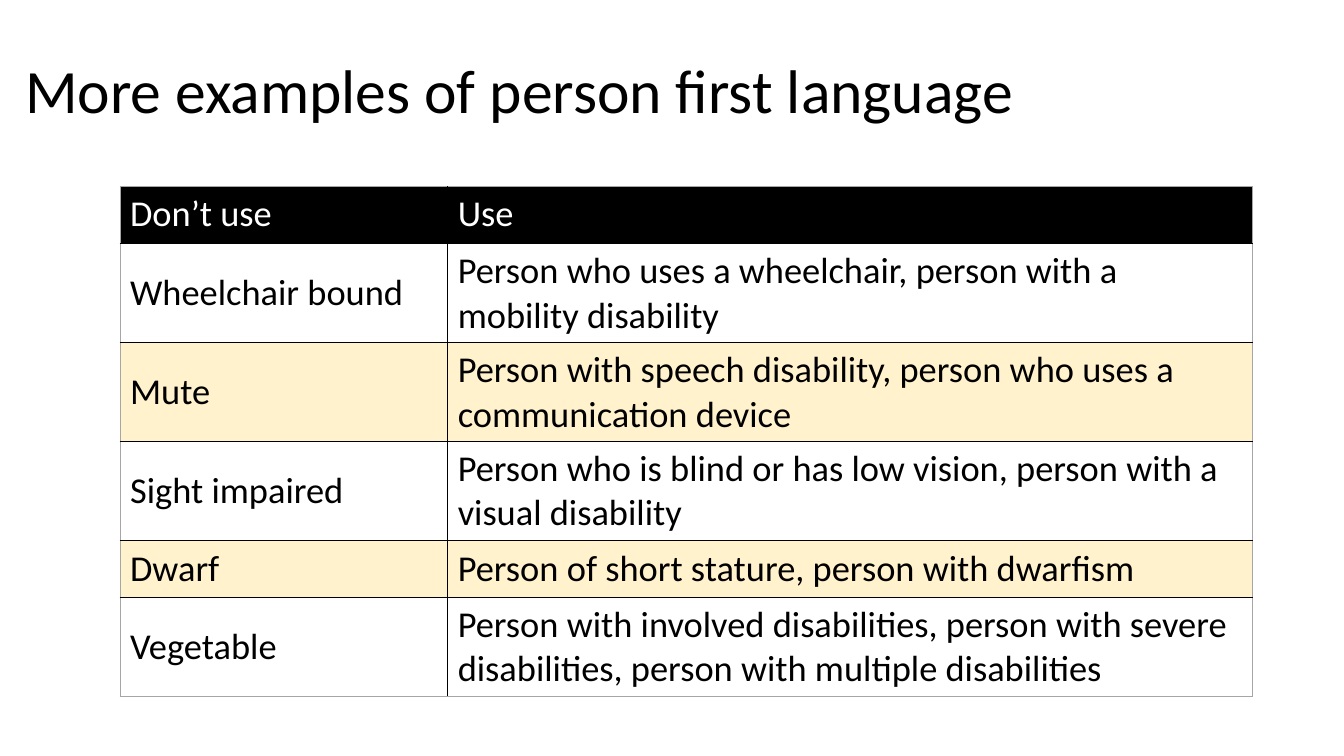
from lxml import etree
from pptx import Presentation
from pptx.dml.color import RGBColor
from pptx.enum import text
from pptx.oxml import ns
from pptx.util import Inches, Pt

TITLE = "More examples of person first language"
HEADINGS = ("Don’t use", "Use")
# (term to avoid, person first wording, lines of wording)
EXAMPLES = [
    ("Wheelchair bound", "Person who uses a wheelchair, person with a mobility disability", 2),
    ("Mute", "Person with speech disability, person who uses a communication device", 2),
    ("Sight impaired", "Person who is blind or has low vision, person with a visual disability", 2),
    ("Dwarf", "Person of short stature, person with dwarfism", 1),
    ("Vegetable", "Person with involved disabilities, person with severe disabilities, "
                  "person with multiple disabilities", 2),
]
COLUMN_WIDTHS = (3.25, 7.98)
ROW_HEIGHTS = {1: 0.57, 2: 0.98}  # by number of lines

THEME = {
    "font": "Calibri", "title_size": 44, "table_size": 26,
    "ink": "000000", "header_ink": "FFFFFF", "header_fill": "000000", "band": "FFF2CC",
    "inner_line": ("000000", 1), "outer_line": ("A6A6A6", 0.5),
}


def write(frame, words, size, color):
    paragraph = frame.paragraphs[0]
    run = paragraph.add_run()
    run.text = words
    for name, value in {"name": THEME["font"], "size": Pt(size), "bold": False}.items():
        setattr(run.font, name, value)
    run.font.color.rgb = RGBColor.from_string(color)
    return paragraph


def set_borders(cell, edges):
    """Draw the cell's sides; edges maps L, R, T, B to (colour, points)."""
    properties = cell._tc.get_or_add_tcPr()
    for position, (side, (color, points)) in enumerate(edges.items()):
        line = etree.Element(ns.qn(f"a:ln{side}"), w=str(Pt(points)))
        fill = etree.SubElement(line, ns.qn("a:solidFill"))
        etree.SubElement(fill, ns.qn("a:srgbClr"), val=color)
        properties.insert(position, line)


def add_title(slide):
    title = slide.shapes.add_textbox(Inches(0.15), 0, Inches(12.27), Inches(1.85))
    frame = title.text_frame
    frame.word_wrap = True
    frame.vertical_anchor = text.MSO_ANCHOR.MIDDLE
    write(frame, TITLE, THEME["title_size"], THEME["ink"]).line_spacing = 0.9


def add_examples(slide):
    rows = [(*HEADINGS, 1), *EXAMPLES]
    heights = [ROW_HEIGHTS[lines] for *_, lines in rows]
    table = slide.shapes.add_table(
        len(rows), len(HEADINGS), Inches(1.19), Inches(1.85),
        Inches(sum(COLUMN_WIDTHS)), Inches(sum(heights))).table
    for column, width in zip(table.columns, COLUMN_WIDTHS):
        column.width = Inches(width)
    inner, outer = THEME["inner_line"], THEME["outer_line"]
    last_row, last_column = len(rows) - 1, len(HEADINGS) - 1

    for r, (*wordings, _) in enumerate(rows):
        table.rows[r].height = Inches(heights[r])
        header = r == 0
        fill = THEME["header_fill"] if header else THEME["band"] if r % 2 == 0 else None
        for c, wording in enumerate(wordings):
            cell = table.cell(r, c)
            write(cell.text_frame, wording, THEME["table_size"],
                  THEME["header_ink" if header else "ink"])
            cell.vertical_anchor = text.MSO_ANCHOR.TOP if header else text.MSO_ANCHOR.MIDDLE
            if fill:
                cell.fill.solid()
                cell.fill.fore_color.rgb = RGBColor.from_string(fill)
            else:
                cell.fill.background()
            set_borders(cell, {
                "L": outer if c == 0 else inner,
                "R": outer if c == last_column else inner,
                "T": outer if header else inner,
                "B": outer if r == last_row else inner,
            })


def main():
    deck = Presentation()
    deck.slide_width, deck.slide_height = Inches(13.33), Inches(7.5)
    slide = deck.slides.add_slide(deck.slide_layouts[6])
    add_title(slide)
    add_examples(slide)
    deck.save("out.pptx")


if __name__ == "__main__":
    main()
